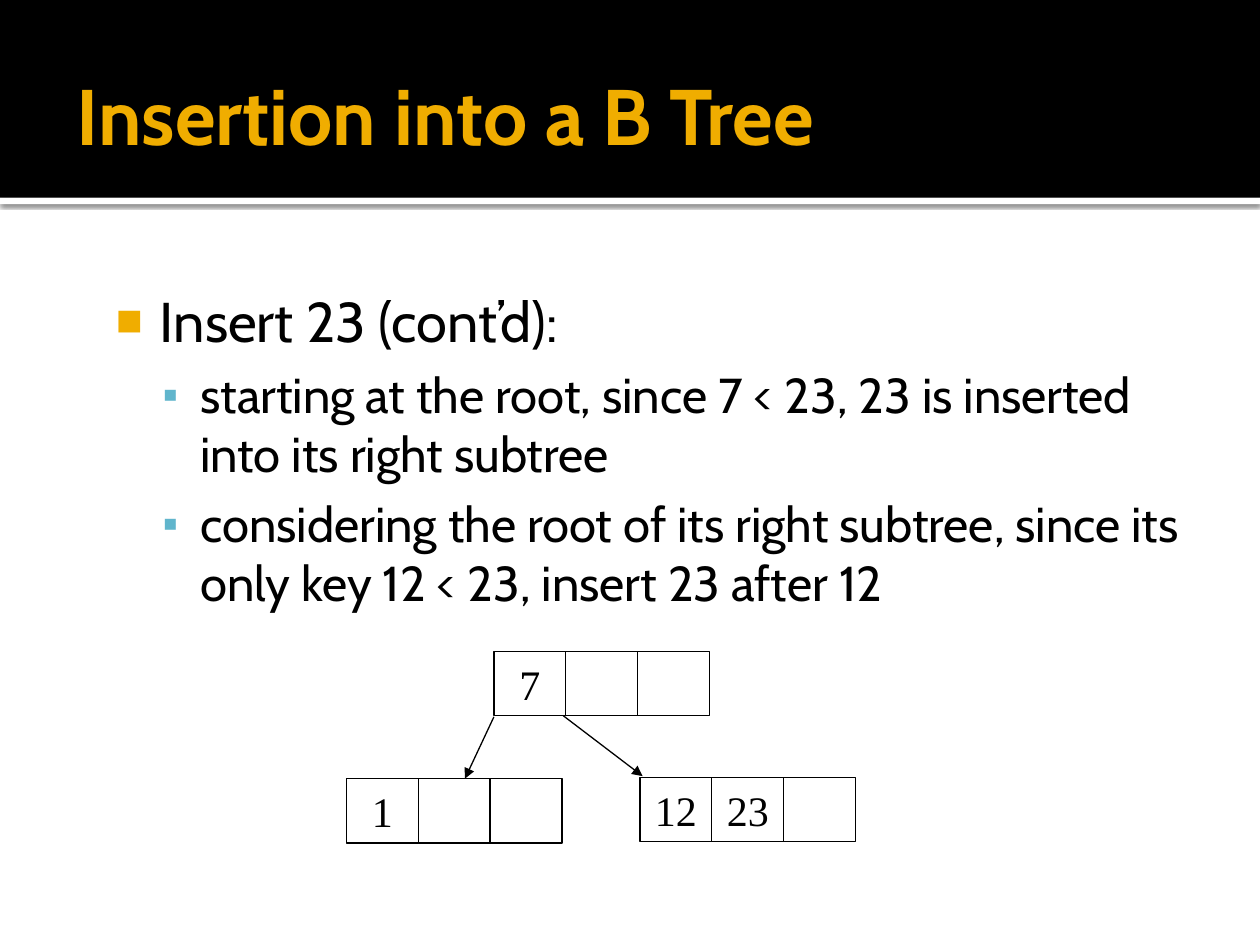
from lxml.etree import SubElement
from pptx import Presentation
from pptx.dml.color import RGBColor
from pptx.enum.shapes import MSO_CONNECTOR, MSO_SHAPE
from pptx.enum.text import MSO_ANCHOR, MSO_AUTO_SIZE, PP_ALIGN
from pptx.oxml import parse_xml
from pptx.oxml.ns import nsdecls, qn
from pptx.util import Inches, Pt

BLACK = RGBColor(0x00, 0x00, 0x00)
WHITE = RGBColor(0xFF, 0xFF, 0xFF)
GOLD = RGBColor(0xF0, 0xAD, 0x00)
TEAL = RGBColor(0x60, 0xB5, 0xCC)

CELL_W, CELL_H = 0.57, 0.51
POINTS = [
    (0, "Insert 23 (cont’d):"),
    (1, "starting at the root, since 7 < 23, 23 is inserted into its right subtree"),
    (1, "considering the root of its right subtree, since its only key 12 < 23, "
        "insert 23 after 12"),
]
# Per level: size, margin, hang, mark, mark colour, mark scale, space before
LEVELS = [
    (32, 0.48, 0.35, "■", GOLD, 80, 0),
    (28, 0.80, 0.30, "▪", TEAL, 90, 6.5),
]
NODES = [(3.92, 5.17, ["7", "", ""]),
         (2.75, 6.18, ["1", "", ""]),
         (5.08, 6.17, ["12", "23", ""])]
LINKS = [(3.92, 5.69, 3.69, 6.18), (4.47, 5.68, 5.10, 6.16)]


def write(para, text, size=24, face="Times New Roman", color=BLACK,
          bold=False, align=PP_ALIGN.LEFT, before=0):
    para.text = text
    para.alignment = align
    para.space_before = Pt(before)
    font = para.font
    font.size, font.name, font.bold = Pt(size), face, bold
    font.color.rgb = color


def bullet(para, margin, hang, mark, color, scale):
    props = para._p.get_or_add_pPr()
    props.set("marL", str(Inches(margin)))
    props.set("indent", str(-Inches(hang)))
    tint = SubElement(props, qn("a:buClr"))
    SubElement(tint, qn("a:srgbClr"), val=str(color))
    SubElement(props, qn("a:buSzPct"), val=str(scale * 1000))
    SubElement(props, qn("a:buFont"), typeface="Arial")
    SubElement(props, qn("a:buChar"), char=mark)


class Deck:
    face = "Cabin"
    line = Pt(0.75)

    def __init__(self, show):
        self.slide = show.slides.add_slide(show.slide_layouts[1])
        self.shapes = self.slide.shapes

    def place(self, shape, box, pads, anchor):
        shape.left, shape.top, shape.width, shape.height = map(Inches, box)
        frame = shape.text_frame
        frame.word_wrap = True
        frame.auto_size = MSO_AUTO_SIZE.NONE
        frame.vertical_anchor = anchor
        (frame.margin_left, frame.margin_top,
         frame.margin_right, frame.margin_bottom) = map(Inches, pads)
        return frame

    def rect(self, x, y, w, h):
        shape = self.shapes.add_shape(
            MSO_SHAPE.RECTANGLE, Inches(x), Inches(y), Inches(w), Inches(h))
        shape.shadow.inherit = False
        return shape

    def band(self, y, h, color):
        shape = self.rect(0, y, 10, h)
        shape.fill.solid()
        shape.fill.fore_color.rgb = color
        shape.line.fill.background()
        # Bands lie behind the placeholders
        self.shapes.element.insert(2, shape.element)
        return shape

    def shade(self, shape):
        effects = shape.element.spPr.find(qn("a:effectLst"))
        effects.append(parse_xml(
            f'<a:outerShdw {nsdecls("a")} blurRad="{Pt(2.5)}" dist="{Pt(0.8)}" '
            'dir="5400000" rotWithShape="0"><a:srgbClr val="000000">'
            '<a:alpha val="60000"/></a:srgbClr></a:outerShdw>'))

    def title(self, text):
        frame = self.place(self.shapes.title, (0.51, 0.28, 8.97, 1.25),
                           (0.1, 0.05, 0.05, 0.05), MSO_ANCHOR.MIDDLE)
        write(frame.paragraphs[0], text, size=45, face=self.face,
              color=GOLD, bold=True)

    def body(self, points):
        frame = self.place(self.slide.placeholders[1], (0.73, 2.17, 9.01, 4.9),
                           (0.06, 0.1, 0.1, 0.05), MSO_ANCHOR.TOP)
        for i, (level, text) in enumerate(points):
            para = frame.add_paragraph() if i else frame.paragraphs[0]
            size, margin, hang, mark, color, scale, before = LEVELS[level]
            para.level = level
            para.space_before = Pt(before)
            bullet(para, margin, hang, mark, color, scale)
            write(para, text, size=size, face=self.face, before=before)

    def node(self, x, y, keys):
        for i, key in enumerate(keys):
            cell = self.rect(x + i * CELL_W, y, CELL_W, CELL_H)
            cell.fill.background()
            cell.line.color.rgb = BLACK
            cell.line.width = self.line
            if key:
                cell.text_frame.vertical_anchor = MSO_ANCHOR.MIDDLE
                write(cell.text_frame.paragraphs[0], key, align=PP_ALIGN.CENTER)

    def arrow(self, *ends):
        link = self.shapes.add_connector(MSO_CONNECTOR.STRAIGHT, *map(Inches, ends))
        link.line.color.rgb = BLACK
        link.line.width = self.line
        SubElement(link.line._get_or_add_ln(), qn("a:tailEnd"), type="triangle")
        SubElement(link.element.spPr, qn("a:effectLst"))


def main():
    show = Presentation()
    show.slide_width, show.slide_height = Inches(10), Inches(7.5)
    deck = Deck(show)

    # Header: the black band lies over the white strip
    deck.band(0, 1.57, BLACK)
    deck.shade(deck.band(1.57, 0.05, WHITE))
    deck.title("Insertion into a B Tree")

    # Explanation
    deck.body(POINTS)

    # Tree
    for node in NODES:
        deck.node(*node)
    for link in LINKS:
        deck.arrow(*link)

    show.save("out.pptx")


if __name__ == "__main__":
    main()
